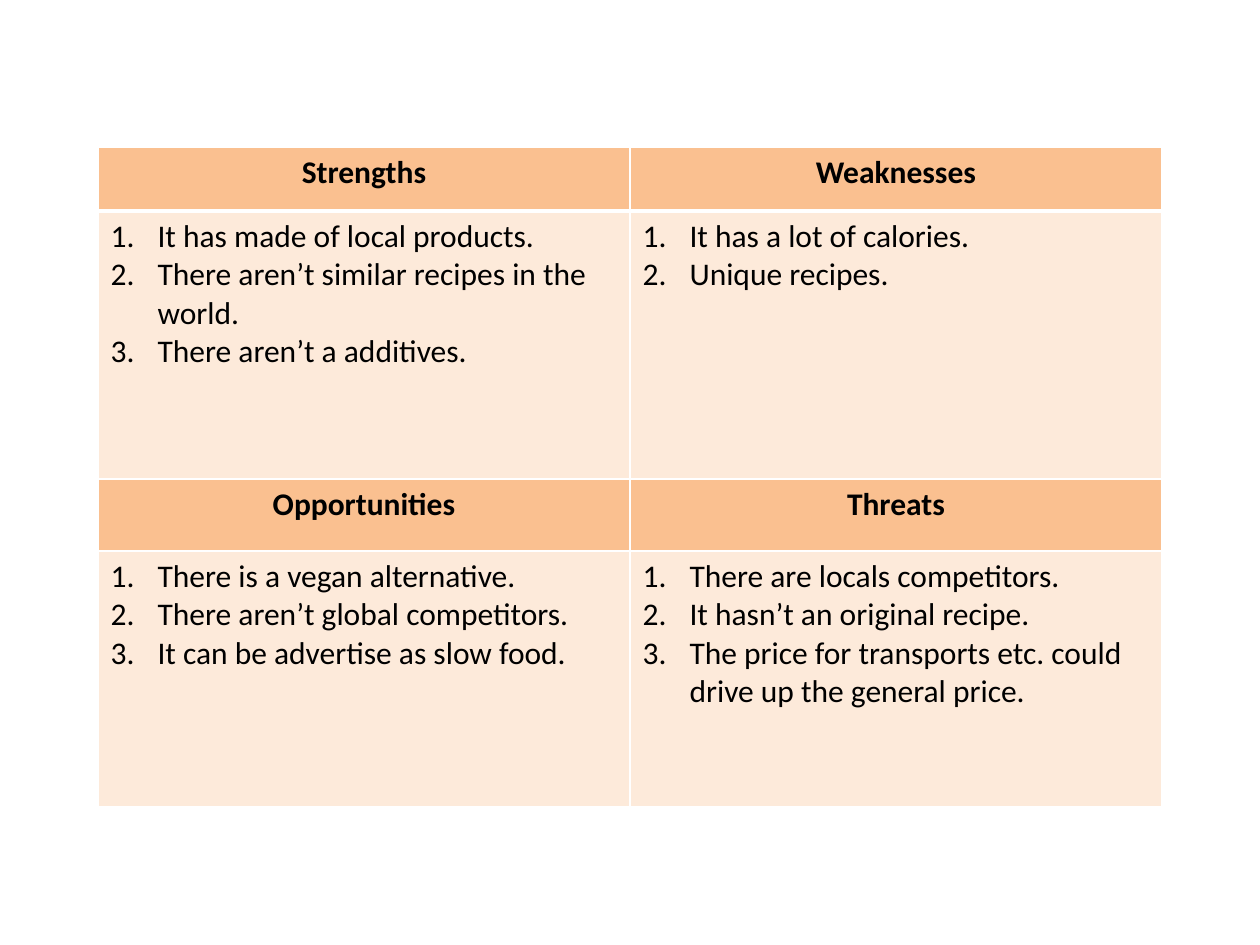
from lxml import etree
from pptx import Presentation
from pptx import util as u
from pptx.dml.color import RGBColor
from pptx.enum import text
from pptx.oxml import ns

PX = 914400 / 126


def px(n):
    return u.Emu(round(n * PX))


def color(hex_string):
    return RGBColor.from_string(hex_string)


prs = Presentation()
prs.slide_width, prs.slide_height = px(1260), px(945)
slide = prs.slides.add_slide(prs.slide_layouts[6])

# SWOT content: each heading row is followed by its row of lists
swot = [
    [["Strengths"], ["Weaknesses"]],
    [["It has made of local products.",
      "There aren’t similar recipes in the world.",
      "There aren’t a additives."],
     ["It has a lot of calories.", "Unique recipes."]],
    [["Opportunities"], ["Threats"]],
    [["There is a vegan alternative.",
      "There aren’t global competitors.",
      "It can be advertise as slow food."],
     ["There are locals competitors.",
      "It hasn’t an original recipe.",
      "The price for transports etc. could drive up the general price."]],
]
row_heights = [64, 268, 72, 256]
col_width, indent = 532, 47

# Table grid
grid = slide.shapes.add_table(4, 2, px(98), px(147), px(2 * col_width),
                              px(sum(row_heights))).table
for column in grid.columns:
    column.width = px(col_width)
for row, height in zip(grid.rows, row_heights):
    row.height = px(height)

for r, row_content in enumerate(swot):
    is_heading = r % 2 == 0
    for c, lines in enumerate(row_content):
        cell = grid.cell(r, c)

        # White borders, thicker under the first heading row
        tc_pr = cell._tc.get_or_add_tcPr()
        for side in "LRTB":
            thick = (r, side) in [(0, "B"), (1, "T")]
            border = etree.SubElement(tc_pr, ns.qn(f"a:ln{side}"),
                                      w=str(u.Pt(3 if thick else 1)))
            line_fill = etree.SubElement(border, ns.qn("a:solidFill"))
            etree.SubElement(line_fill, ns.qn("a:srgbClr"), val="FFFFFF")

        cell.fill.solid()
        cell.fill.fore_color.rgb = color("FAC090" if is_heading else "FDEADA")

        # Centred headings and numbered lists
        cell.text = "\n".join(lines)
        for paragraph in cell.text_frame.paragraphs:
            if is_heading:
                paragraph.alignment = text.PP_ALIGN.CENTER
            else:
                p_pr = paragraph._p.get_or_add_pPr()
                p_pr.set("marL", str(px(indent)))
                p_pr.set("indent", str(-px(indent)))
                etree.SubElement(p_pr, ns.qn("a:buFont"), typeface="+mj-lt")
                etree.SubElement(p_pr, ns.qn("a:buAutoNum"), type="arabicPeriod")
            paragraph.font.name = "Calibri"
            paragraph.font.size = u.Pt(18)
            paragraph.font.bold = is_heading
            paragraph.font.color.rgb = color("000000")

prs.save("out.pptx")
